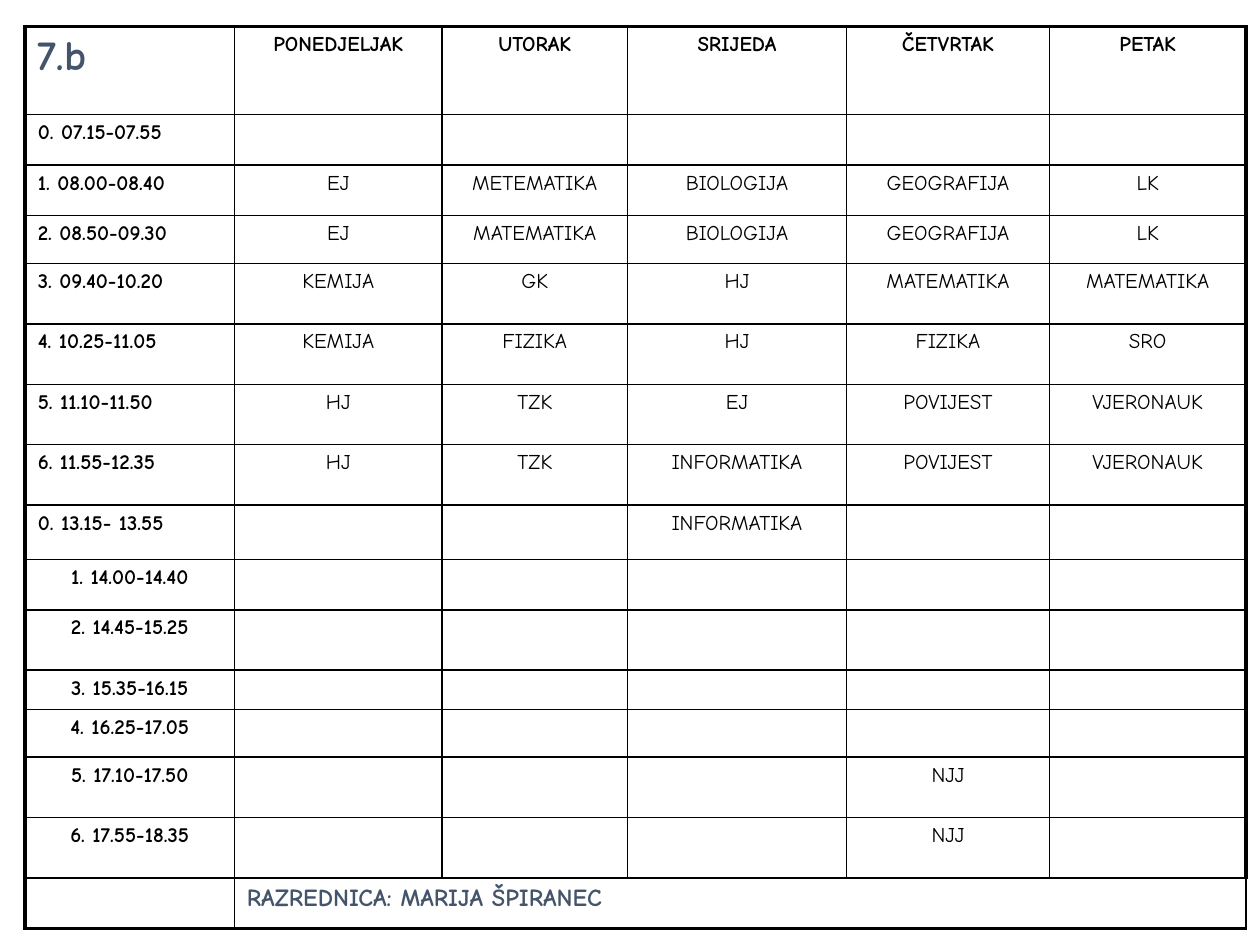
from dataclasses import dataclass

from lxml.etree import SubElement
from pptx import Presentation
from pptx.dml.color import RGBColor
from pptx.enum.text import PP_ALIGN as Align
from pptx.oxml.ns import qn
from pptx.util import Inches, Pt


@dataclass(frozen=True)
class Theme:
    font: str = "Comic Neue"
    ink: str = "000000"
    accent: str = "44546A"
    paper: str = "FFFFFF"
    class_size: int = 24
    teacher_size: int = 14
    body_size: int = 12
    frame: float = 2.25
    rule: float = 1


THEME = Theme()
CLASS_NAME = "7.b"
TEACHER = "RAZREDNICA: MARIJA ŠPIRANEC"
DAYS = ["PONEDJELJAK", "UTORAK", "SRIJEDA", "ČETVRTAK", "PETAK"]
NO_LESSONS = [""] * len(DAYS)

# (period, lessons by day, row height in inches)
MORNING = [
    ("0. 07.15-07.55", NO_LESSONS, 0.4),
    ("1. 08.00-08.40", ["EJ", "METEMATIKA", "BIOLOGIJA", "GEOGRAFIJA", "LK"], 0.4),
    ("2. 08.50-09.30", ["EJ", "MATEMATIKA", "BIOLOGIJA", "GEOGRAFIJA", "LK"], 0.38),
    ("3. 09.40-10.20", ["KEMIJA", "GK", "HJ", "MATEMATIKA", "MATEMATIKA"], 0.48),
    ("4. 10.25-11.05", ["KEMIJA", "FIZIKA", "HJ", "FIZIKA", "SRO"], 0.48),
    ("5. 11.10-11.50", ["HJ", "TZK", "EJ", "POVIJEST", "VJERONAUK"], 0.48),
    ("6. 11.55-12.35", ["HJ", "TZK", "INFORMATIKA", "POVIJEST", "VJERONAUK"], 0.48),
    ("0. 13.15- 13.55", ["", "", "INFORMATIKA", "", ""], 0.43),
]
AFTERNOON = [
    ("1. 14.00-14.40", NO_LESSONS, 0.4),
    ("2. 14.45-15.25", NO_LESSONS, 0.48),
    ("3. 15.35-16.15", NO_LESSONS, 0.31),
    ("4. 16.25-17.05", NO_LESSONS, 0.38),
    ("5. 17.10-17.50", ["", "", "", "NJJ", ""], 0.48),
    ("6. 17.55-18.35", ["", "", "", "NJJ", ""], 0.48),
]
PERIODS = MORNING + AFTERNOON
COLUMN_WIDTHS = [1.66, 1.65, 1.47, 1.74, 1.61, 1.56]
ROW_HEIGHTS = [0.7] + [height for *_, height in PERIODS] + [0.4]
LEFT, TOP = 0.2, 0.21


def write(cell, text, size=THEME.body_size, color=THEME.ink, bold=False, align=Align.CENTER):
    cell.text = text
    paragraph = cell.text_frame.paragraphs[0]
    paragraph.alignment = align
    for run in paragraph.runs:
        run.font.name = THEME.font
        run.font.size = Pt(size)
        run.font.bold = bold
        run.font.color.rgb = RGBColor.from_string(color)
    if not text:  # keeps empty cells from stretching their row
        SubElement(paragraph._p, qn("a:endParaRPr"), sz=str(size * 100))


def draw_borders(cell, outer):
    """Rule all four sides, heavier on those named in outer."""
    properties = cell._tc.get_or_add_tcPr()
    for side in "LRTB":
        weight = THEME.frame if side in outer else THEME.rule
        line = SubElement(properties, qn(f"a:ln{side}"), w=str(Pt(weight)))
        fill = SubElement(line, qn("a:solidFill"))
        SubElement(fill, qn("a:srgbClr"), val=THEME.ink)


def outer_sides(row, column):
    on_edge = {
        "L": column == 0,
        "R": column == len(COLUMN_WIDTHS) - 1,
        "T": row == 0,
        "B": row == len(ROW_HEIGHTS) - 1,
    }
    return [side for side, touches in on_edge.items() if touches]


def add_timetable(slide):
    timetable = slide.shapes.add_table(
        len(ROW_HEIGHTS), len(COLUMN_WIDTHS), Inches(LEFT), Inches(TOP),
        Inches(sum(COLUMN_WIDTHS)), Inches(sum(ROW_HEIGHTS))).table
    timetable.first_row = timetable.horz_banding = False
    for column, width in zip(timetable.columns, COLUMN_WIDTHS):
        column.width = Inches(width)
    for row, height in zip(timetable.rows, ROW_HEIGHTS):
        row.height = Inches(height)

    for r in range(len(ROW_HEIGHTS)):
        for c in range(len(COLUMN_WIDTHS)):
            cell = timetable.cell(r, c)
            draw_borders(cell, outer_sides(r, c))
            cell.fill.solid()
            cell.fill.fore_color.rgb = RGBColor.from_string(THEME.paper)

    write(timetable.cell(0, 0), CLASS_NAME, THEME.class_size, THEME.accent, True, Align.LEFT)
    for c, day in enumerate(DAYS, 1):
        write(timetable.cell(0, c), day, bold=True)
    for r, (period, lessons, _) in enumerate(PERIODS, 1):
        align = Align.LEFT if r <= len(MORNING) else Align.CENTER
        write(timetable.cell(r, 0), period, bold=True, align=align)
        for c, lesson in enumerate(lessons, 1):
            write(timetable.cell(r, c), lesson)

    last = len(ROW_HEIGHTS) - 1
    write(timetable.cell(last, 0), "")
    teacher = timetable.cell(last, 1)
    teacher.merge(timetable.cell(last, len(DAYS)))
    write(teacher, TEACHER, THEME.teacher_size, THEME.accent, True, Align.LEFT)


def main():
    deck = Presentation()
    deck.slide_width, deck.slide_height = Inches(10), Inches(7.5)
    add_timetable(deck.slides.add_slide(deck.slide_layouts[6]))
    deck.save("out.pptx")


if __name__ == "__main__":
    main()
